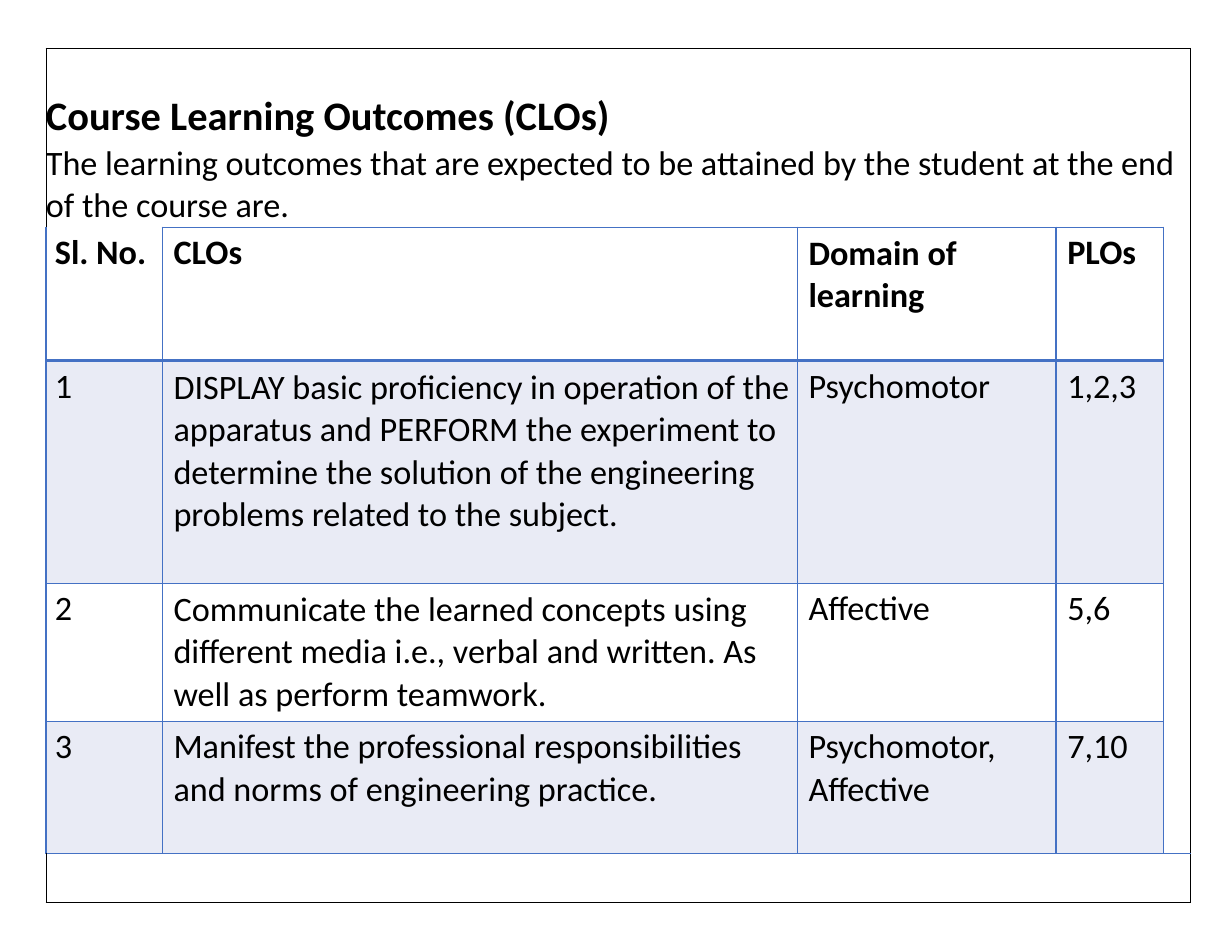
import pptx
import pptx.util
import pptx.dml.color
from dataclasses import dataclass
from lxml import etree
from pptx.oxml.ns import qn


@dataclass(frozen=True)
class Theme:
    font: str = "Calibri"
    ink: str = "000000"
    blue: str = "4471C4"
    band: str = "E9EBF5"
    title: int = 26
    body: int = 22
    hair: float = 0.5
    line: float = 1
    heavy: float = 2.25


T = Theme()
NO_STYLE = "{2D5ABB26-0587-4C30-8999-92F81FD0307C}"
Inches, Pt = pptx.util.Inches, pptx.util.Pt

INTRO = [
    ("Course Learning Outcomes (CLOs)",
     dict(size=Pt(T.title), bold=True), dict(space_before=Pt(0.2))),
    ("The learning outcomes that are expected to be attained by the student "
     "at the end of the course are.",
     dict(size=Pt(T.body), bold=False),
     dict(space_before=Pt(0.4), line_spacing=1.02)),
]
OUTCOMES = [
    ("Sl. No.", "CLOs", "Domain of learning", "PLOs"),
    ("1", "DISPLAY basic proficiency in operation of the apparatus and PERFORM "
     "the experiment to determine the solution of the engineering problems "
     "related to the subject.", "Psychomotor", "1,2,3"),
    ("2", "Communicate the learned concepts using different media i.e., verbal "
     "and written. As well as perform teamwork.", "Affective", "5,6"),
    ("3", "Manifest the professional responsibilities and norms of engineering "
     "practice.", "Psychomotor, Affective", "7,10"),
]
COLS = [1.04, 5.67, 2.31, 0.96, 0.17]
ROWS = [1.6, 1.19, 1.99, 1.23, 1.18, 0.44]
LEFT, TOP = 0.41, 0.43
LAST_COL, LAST_ROW = len(COLS) - 1, len(ROWS) - 1


def edges(row, col):
    """Borders of one grid cell as {side: (colour, points)}."""
    frame, grid, rule = (T.ink, T.hair), (T.blue, T.line), (T.blue, T.heavy)
    if row in (0, LAST_ROW):
        sides = {"T": frame} if row == 0 else {"T": grid, "B": frame}
        if col == 0:
            sides["L"] = frame
        if col in (0, LAST_COL):
            sides["R"] = frame
        return sides
    if col == LAST_COL:
        return {"L": grid, "R": frame}
    sides = {"L": grid, "R": grid, "T": grid, "B": grid}
    if row == 1:
        sides["B"] = rule
        if col == 0:
            del sides["T"]
    elif row == 2:
        sides["T"] = rule
    return sides


def draw_borders(cell, sides):
    tc_pr = cell._tc.get_or_add_tcPr()
    for side in "LRTB":
        colour, width = sides.get(side, (None, 0))
        ln = etree.SubElement(tc_pr, qn(f"a:ln{side}"), w=str(int(Pt(width))))
        if colour is None:
            etree.SubElement(ln, qn("a:noFill"))
        else:
            fill = etree.SubElement(ln, qn("a:solidFill"))
            etree.SubElement(fill, qn("a:srgbClr"), val=colour)


def set_attrs(obj, values):
    for name, value in values.items():
        setattr(obj, name, value)


def write(p, text, font, spacing):
    r = p.add_run()
    r.text = text
    set_attrs(r.font, dict(name=T.font, **font))
    r.font.color.rgb = pptx.dml.color.RGBColor.from_string(T.ink)
    set_attrs(p, spacing)


def set_margins(cell, top):
    set_attrs(cell, dict(margin_left=0, margin_right=0, margin_bottom=0,
                         margin_top=Inches(top)))


def main():
    prs = pptx.Presentation()
    prs.slide_width, prs.slide_height = Inches(11), Inches(8.5)
    s = prs.slides.add_slide(prs.slide_layouts[6])
    frame = s.shapes.add_table(len(ROWS), len(COLS), Inches(LEFT), Inches(TOP),
                               Inches(sum(COLS)), Inches(sum(ROWS)))
    table = frame.table
    set_attrs(table, dict(first_row=False, horz_banding=False))
    table._tbl.tblPr[0].text = NO_STYLE
    for col, width in zip(table.columns, COLS):
        col.width = Inches(width)
    for row, height in zip(table.rows, ROWS):
        row.height = Inches(height)

    for r in range(len(ROWS)):
        for c in range(len(COLS)):
            cell = table.cell(r, c)
            draw_borders(cell, edges(r, c))
            if r in (2, 4) and c < LAST_COL:
                cell.fill.solid()
                cell.fill.fore_color.rgb = pptx.dml.color.RGBColor.from_string(T.band)
            else:
                cell.fill.background()

    for r in (0, LAST_ROW):
        table.cell(r, 0).merge(table.cell(r, LAST_COL))
    table.cell(1, LAST_COL).merge(table.cell(LAST_ROW - 1, LAST_COL))

    intro = table.cell(0, 0)
    set_margins(intro, 0.39)
    tf = intro.text_frame
    for i, (text, font, spacing) in enumerate(INTRO):
        write(tf.paragraphs[0] if i == 0 else tf.add_paragraph(), text, font, spacing)

    for r, outcome in enumerate(OUTCOMES, start=1):
        for c, text in enumerate(outcome):
            cell = table.cell(r, c)
            set_margins(cell, 0.05 if r == 2 else 0.04)
            p = cell.text_frame.paragraphs[0]
            wraps = Inches(COLS[c]) < Pt(T.body * 0.5 * len(text))
            spacing = dict(space_before=Pt(3.8 if r == 2 else 3))
            if wraps and c in (1, 2):
                spacing = dict(space_before=Pt(3.4 if r == 2 else 2.6), line_spacing=1.02)
            write(p, text, dict(size=Pt(T.body), bold=r == 1), spacing)
            p._p.get_or_add_pPr().set("marL", str(Inches(0.08 if c == 0 else 0.1)))

    prs.save("out.pptx")


if __name__ == "__main__":
    main()
